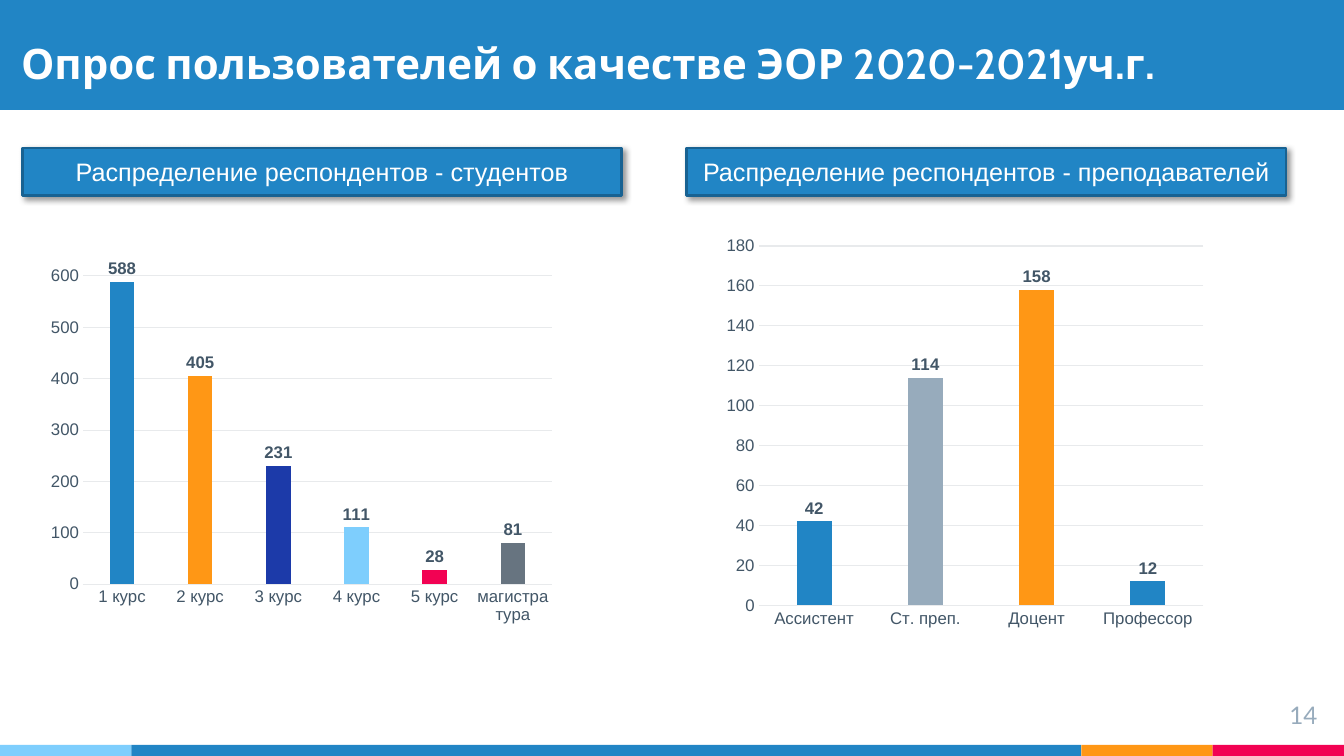
from dataclasses import dataclass

from lxml import etree
from pptx import Presentation
from pptx.chart.data import CategoryChartData
from pptx.dml.color import RGBColor
from pptx.enum.chart import XL_CHART_TYPE, XL_LABEL_POSITION, XL_TICK_MARK
from pptx.enum.shapes import MSO_SHAPE
from pptx.enum.text import MSO_ANCHOR, MSO_AUTO_SIZE, PP_ALIGN
from pptx.oxml import parse_xml
from pptx.oxml.ns import nsdecls, qn
from pptx.util import Cm, Pt

COLUMN = XL_CHART_TYPE.COLUMN_CLUSTERED
OUTSIDE = XL_LABEL_POSITION.OUTSIDE_END
NO_TICK = XL_TICK_MARK.NONE
RECT = MSO_SHAPE.RECTANGLE
TOP, MIDDLE, BOTTOM = MSO_ANCHOR.TOP, MSO_ANCHOR.MIDDLE, MSO_ANCHOR.BOTTOM
LEFT, CENTER, RIGHT = PP_ALIGN.LEFT, PP_ALIGN.CENTER, PP_ALIGN.RIGHT
NO_FIT = MSO_AUTO_SIZE.NONE


@dataclass(frozen=True)
class Theme:
    blue: str = "2185C5"
    edge: str = "186292"
    orange: str = "FF9715"
    navy: str = "1C3AA9"
    sky: str = "7ECEFD"
    red: str = "F20253"
    gray: str = "677480"
    silver: str = "97ABBC"
    ink: str = "425667"
    grid: str = "E8EAEC"
    white: str = "FFFFFF"
    body_font: str = "Arial"
    title_font: str = "Cabin"
    number_font: str = "Lato"
    title_size: float = 30
    header_size: float = 18
    number_size: float = 17.3
    axis_size: float = 12
    chart_size: float = 10


T = Theme()
WIDTH, HEIGHT = 33.87, 19.05
BAND_HEIGHT = 2.77
STRIPE_HEIGHT = 0.28

TITLE = "Опрос пользователей о качестве ЭОР 2020-2021уч.г."
NUMBER = "14"
STRIPES = [(3.31, T.sky), (23.94, T.blue), (3.31, T.orange), (3.31, T.red)]
SURVEYS = [
    {
        "header": "Распределение респондентов - студентов",
        "left": 0.56,
        "chart": (0.97, 6.2, 13.51, 11.79),
        "bars": [
            ("1 курс", 588, T.blue), ("2 курс", 405, T.orange),
            ("3 курс", 231, T.navy), ("4 курс", 111, T.sky),
            ("5 курс", 28, T.red), ("магистратура", 81, T.gray),
        ],
        "max": 600,
        "plot": {"x": 0.083, "y": 0.064, "w": 0.875, "h": 0.659},
    },
    {
        "header": "Распределение респондентов - преподавателей",
        "left": 17.3,
        "chart": (18.06, 5.77, 12.52, 10.24),
        "bars": [
            ("Ассистент", 42, T.blue), ("Ст. преп.", 114, T.silver),
            ("Доцент", 158, T.orange), ("Профессор", 12, T.blue),
        ],
        "max": None,
        "plot": None,
    },
]


def rgb(color):
    return RGBColor.from_string(color)


def set_font(font, name, size, color, bold=False):
    font.name, font.size, font.bold = name, Pt(size), bold
    font.color.rgb = rgb(color)


def write(sp, text, align, anchor, *font, bold=False):
    tf = sp.text_frame
    tf.word_wrap, tf.auto_size, tf.vertical_anchor = True, NO_FIT, anchor
    tf.margin_left = tf.margin_right = tf.margin_top = tf.margin_bottom = Cm(0.25)
    p = tf.paragraphs[0]
    p.alignment = align
    r = p.add_run()
    r.text = text
    set_font(r.font, *font, bold=bold)


def add_rect(s, box, fill):
    sp = s.shapes.add_shape(RECT, *map(Cm, box))
    sp.shadow.inherit = False
    sp.fill.solid()
    sp.fill.fore_color.rgb = rgb(fill)
    sp.line.fill.background()
    return sp


def add_header(s, text, left):
    sp = add_rect(s, (left, 3.73, 15.11, 1.19), T.blue)
    sp.line.color.rgb = rgb(T.edge)
    sp.line.width = Pt(2)
    sp.element.spPr.find(qn("a:effectLst")).append(parse_xml(
        f'<a:outerShdw {nsdecls("a")} blurRad="50800" dist="38100" dir="2700000" '
        'algn="tl" rotWithShape="0"><a:srgbClr val="000000"><a:alpha val="40000"/>'
        '</a:srgbClr></a:outerShdw>'))
    write(sp, text, CENTER, MIDDLE, T.body_font, T.header_size, T.white)


def set_plot_area(chart, plot):
    area = chart.element.find(".//" + qn("c:plotArea"))
    layout = area.find(qn("c:layout"))
    if layout is None:
        layout = parse_xml(f'<c:layout {nsdecls("c")}/>')
        area.insert(0, layout)
    manual = etree.SubElement(layout, qn("c:manualLayout"))
    settings = {"layoutTarget": "inner", "xMode": "edge", "yMode": "edge", **plot}
    for tag, value in settings.items():
        etree.SubElement(manual, qn("c:" + tag)).set("val", str(value))


def style_axis(axis):
    axis.major_tick_mark = axis.minor_tick_mark = NO_TICK
    set_font(axis.tick_labels.font, T.body_font, T.axis_size, T.ink)


def keep_labels_level(chart):
    steps = (".//" + qn("c:catAx"), qn("c:txPr"), qn("a:bodyPr"))
    chart.element.find("/".join(steps)).set("rot", "0")


def style_line(line):
    line.color.rgb = rgb(T.grid)
    line.width = Pt(0.75)


def add_survey_chart(s, survey):
    names, values, colors = zip(*survey["bars"])
    data = CategoryChartData()
    data.categories = names
    data.add_series("Series 1", values)
    chart = s.shapes.add_chart(COLUMN, *map(Cm, survey["chart"]), data).chart
    chart.has_title = chart.has_legend = False
    set_font(chart.font, T.body_font, T.chart_size, T.gray)

    cat, val = chart.category_axis, chart.value_axis
    style_axis(cat)
    style_axis(val)
    keep_labels_level(chart)
    style_line(cat.format.line)
    val.format.line.fill.background()
    style_line(val.major_gridlines.format.line)
    val.minimum_scale = 0
    if survey["max"]:
        val.maximum_scale = survey["max"]

    plot = chart.plots[0]
    plot.vary_by_categories = False
    plot.gap_width, plot.overlap = 219, -27
    series = plot.series[0]
    series.format.fill.solid()
    series.format.fill.fore_color.rgb = rgb(T.blue)
    for i, color in enumerate(colors):
        if color != T.blue:
            fill = series.points[i].format.fill
            fill.solid()
            fill.fore_color.rgb = rgb(color)
    labels = series.data_labels
    labels.show_value, labels.position = True, OUTSIDE
    set_font(labels.font, T.body_font, T.axis_size, T.ink, bold=True)
    if survey["plot"]:
        set_plot_area(chart, survey["plot"])


def main():
    prs = Presentation()
    prs.slide_width, prs.slide_height = Cm(WIDTH), Cm(HEIGHT)
    s = prs.slides.add_slide(prs.slide_layouts[5])
    x = 0
    for width, color in STRIPES:
        add_rect(s, (x, HEIGHT - STRIPE_HEIGHT, width, STRIPE_HEIGHT), color)
        x += width
    title = s.shapes.title
    band = add_rect(s, (0, 0, WIDTH, BAND_HEIGHT), T.blue)
    title.element.addprevious(band.element)
    title.left, title.top, title.width, title.height = map(Cm, (0.28, 0, 29.26, 2.46))
    write(title, TITLE, LEFT, BOTTOM, T.title_font, T.title_size, T.white, bold=True)
    number = s.shapes.add_textbox(*map(Cm, (31.42, 17.4, 2.03, 1.17)))
    write(number, NUMBER, RIGHT, TOP, T.number_font, T.number_size, T.silver)
    for survey in SURVEYS:
        add_header(s, survey["header"], survey["left"])
        add_survey_chart(s, survey)
    prs.save("out.pptx")


if __name__ == "__main__":
    main()
